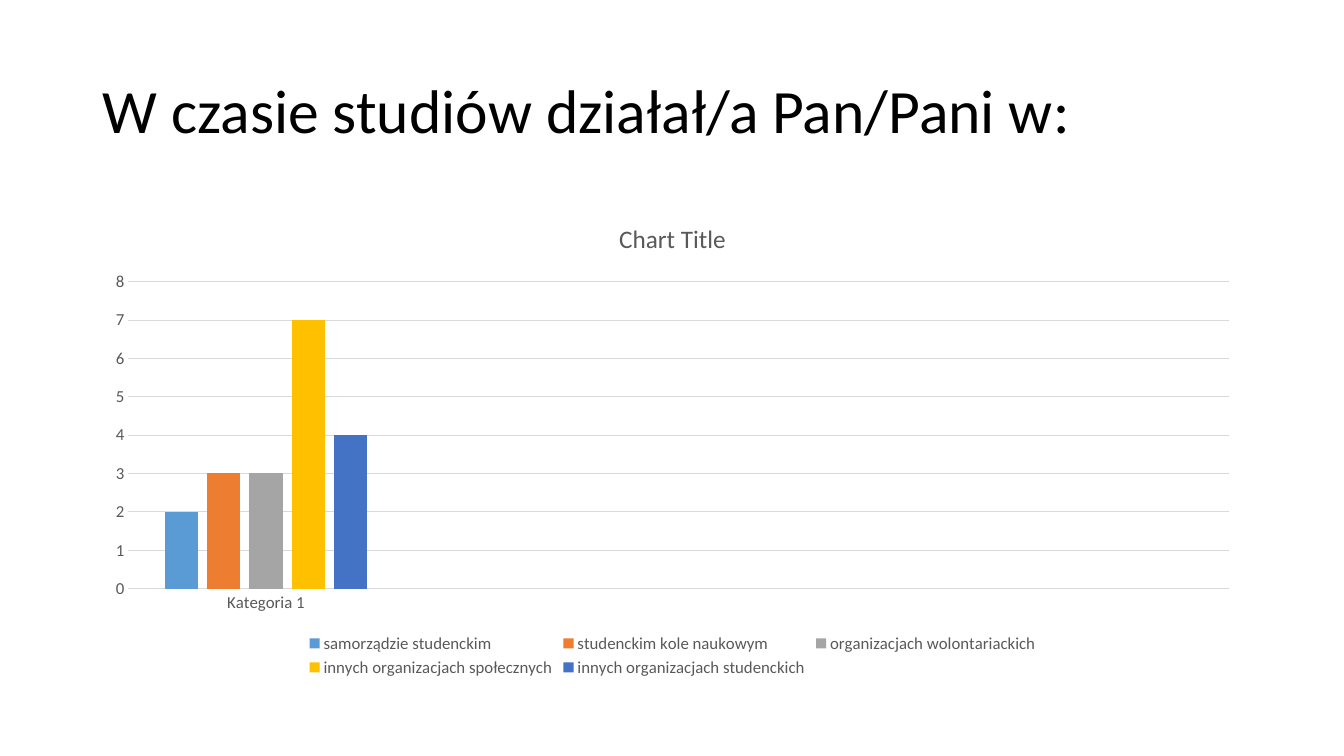
import pptx
import pptx.chart.data
import pptx.dml.color
import pptx.enum.chart
import pptx.enum.text
import pptx.util

TITLE = "W czasie studiów działał/a Pan/Pani w:"
HEAD = "Chart Title"
CATS = ["Kategoria 1", "", "", ""]
SERIES = [
    ("samorządzie studenckim", 2, "blue"),
    ("studenckim kole naukowym", 3, "orange"),
    ("organizacjach wolontariackich", 3, "gray"),
    ("innych organizacjach społecznych", 7, "gold"),
    ("innych organizacjach studenckich", 4, "navy"),
]
COLORS = {
    "black": "000000", "text": "595959", "grid": "D9D9D9",
    "blue": "5B9BD5", "orange": "ED7D31", "gray": "A5A5A5",
    "gold": "FFC000", "navy": "4472C4",
}
FACE = "Calibri"
WIDE, HIGH = 13.33, 7.5
LEFT, SPAN = 0.92, 11.5
Inches, Pt = pptx.util.Inches, pptx.util.Pt


def tint(name):
    return pptx.dml.color.RGBColor.from_string(COLORS[name])


def style(font, size, color):
    font.name, font.size, font.bold = FACE, Pt(size), False
    font.color.rgb = tint(color)


def rule(line):
    line.color.rgb = tint("grid")
    line.width = Pt(0.75)


def add_title(slide):
    box = slide.shapes.add_textbox(Inches(LEFT), Inches(0.4), Inches(SPAN), Inches(1.45))
    frame = box.text_frame
    frame.word_wrap = True
    frame.vertical_anchor = pptx.enum.text.MSO_ANCHOR.MIDDLE
    para = frame.paragraphs[0]
    para.line_spacing = 0.9
    run = para.add_run()
    run.text = TITLE
    style(run.font, 44, "black")


def add_bars(slide):
    data = pptx.chart.data.CategoryChartData()
    data.categories = CATS
    blanks = [None] * (len(CATS) - 1)
    for name, value, _ in SERIES:
        data.add_series(name, [value] + blanks)
    kinds = pptx.enum.chart
    chart = slide.shapes.add_chart(
        kinds.XL_CHART_TYPE.COLUMN_CLUSTERED,
        Inches(LEFT), Inches(2), Inches(SPAN), Inches(4.76), data).chart
    style(chart.font, 10, "black")

    chart.has_title = True
    run = chart.chart_title.text_frame.paragraphs[0].add_run()
    run.text = HEAD
    style(run.font, 18, "text")
    chart.chart_title.include_in_layout = False

    chart.has_legend = True
    chart.legend.position = kinds.XL_LEGEND_POSITION.BOTTOM
    chart.legend.include_in_layout = False
    style(chart.legend.font, 12, "text")

    for axis in (chart.category_axis, chart.value_axis):
        axis.major_tick_mark = axis.minor_tick_mark = kinds.XL_TICK_MARK.NONE
        style(axis.tick_labels.font, 12, "text")
    rule(chart.category_axis.format.line)
    chart.value_axis.format.line.fill.background()
    rule(chart.value_axis.major_gridlines.format.line)

    plot = chart.plots[0]
    plot.gap_width, plot.overlap, plot.vary_by_categories = 219, -27, False
    for bars, (_, _, color) in zip(plot.series, SERIES):
        bars.format.fill.solid()
        bars.format.fill.fore_color.rgb = tint(color)
        bars.invert_if_negative = False


def main():
    deck = pptx.Presentation()
    deck.slide_width, deck.slide_height = Inches(WIDE), Inches(HIGH)
    slide = deck.slides.add_slide(deck.slide_layouts[6])
    add_title(slide)
    add_bars(slide)
    deck.save("out.pptx")


if __name__ == "__main__":
    main()
